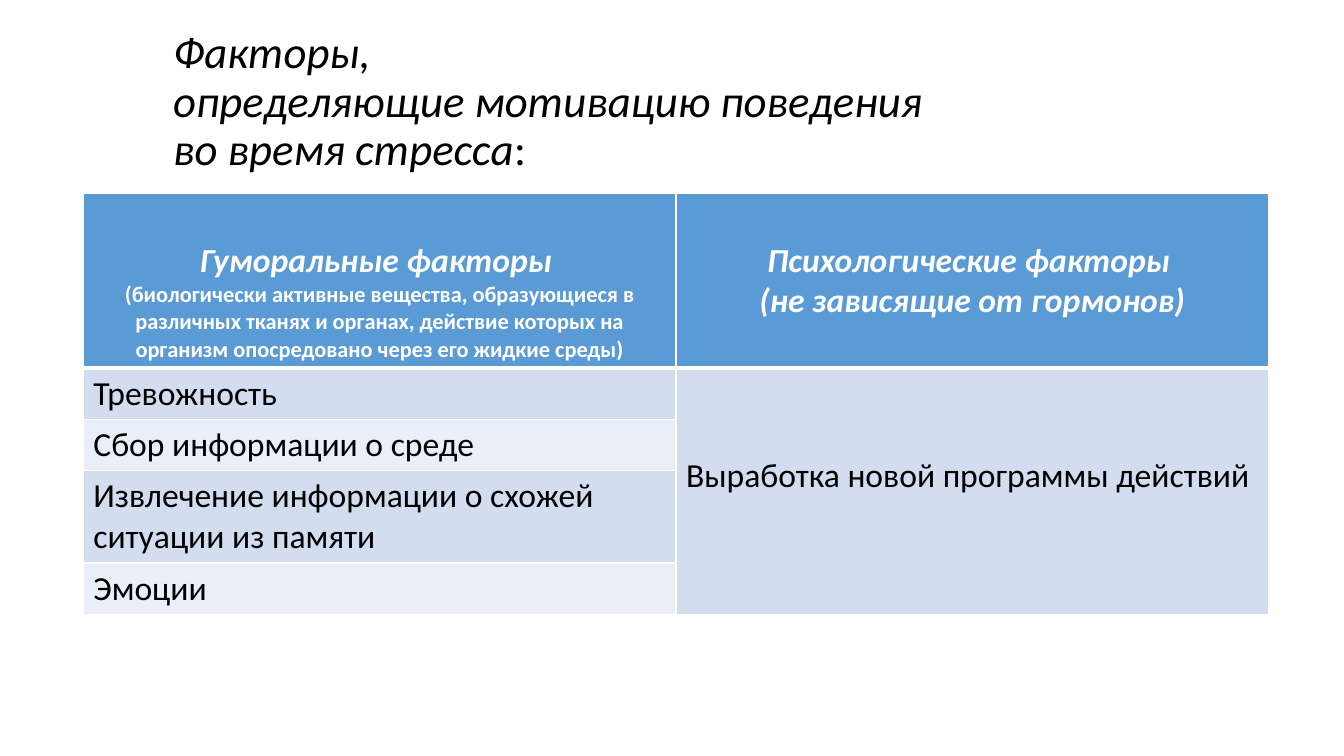
from lxml.etree import SubElement
from pptx import Presentation
from pptx.dml.color import RGBColor as Rgb
from pptx.enum.text import MSO_ANCHOR as Anchor, MSO_AUTO_SIZE as AutoSize, PP_ALIGN as Align
from pptx.oxml.ns import qn
from pptx.util import Cm, Pt

COLORS = {"text": "000000", "white": "FFFFFF", "header": "5B9BD5",
          "odd": "D2DEEF", "even": "EAEFF7"}
FONT = "Calibri"
TITLE_LINES = ["Факторы, ", "определяющие мотивацию поведения ", "во время стресса"]
HUMORAL_HEADER = [
    ("Гуморальные факторы ", 24, True),
    ("(биологически активные вещества, образующиеся в различных тканях и органах, "
     "действие которых на организм опосредовано через его жидкие среды)", 16, False),
]
PSYCHOLOGICAL_HEADER = [
    ("Психологические факторы ", 24, True),
    ("(не зависящие от гормонов)", 24, True),
]
HUMORAL_FACTORS = ["Тревожность", "Сбор информации о среде",
                   "Извлечение информации о схожей ситуации из памяти", "Эмоции"]
PSYCHOLOGICAL_FACTOR = "Выработка новой программы действий"
ROW_HEIGHTS = [4.35, 1.29, 1.29, 2.32, 1.29]


def add_run(paragraph, text, size, color, bold=False, italic=False):
    """Append one formatted run to a paragraph."""
    run = paragraph.add_run()
    run.text = text
    font = run.font
    font.name, font.size, font.bold, font.italic = FONT, Pt(size), bold, italic
    font.color.rgb = Rgb.from_string(COLORS[color])


def add_borders(cell, top=1, bottom=1):
    """Give a cell white borders with the given top and bottom widths in points."""
    properties = cell._tc.get_or_add_tcPr()
    for side, width in (("L", 1), ("R", 1), ("T", top), ("B", bottom)):
        border = SubElement(properties, qn(f"a:ln{side}"), w=str(Pt(width)))
        fill = SubElement(border, qn("a:solidFill"))
        SubElement(fill, qn("a:srgbClr"), val=COLORS["white"])


def fill_cell(cell, lines, fill, color, bold=False, align=Align.LEFT, top_margin=0.13):
    """Fill a cell and write its lines as separate paragraphs."""
    cell.fill.solid()
    cell.fill.fore_color.rgb = Rgb.from_string(COLORS[fill])
    cell.margin_top = Cm(top_margin)
    frame = cell.text_frame
    for index, (text, size, italic) in enumerate(lines):
        paragraph = frame.add_paragraph() if index else frame.paragraphs[0]
        paragraph.alignment = align
        add_run(paragraph, text, size, color, bold, italic)


def build_title(slide, left, top, width, height):
    """Place the three-line title in its placeholder."""
    title = slide.shapes.title
    title.left, title.top, title.width, title.height = map(Cm, (left, top, width, height))
    frame = title.text_frame
    frame.auto_size = AutoSize.NONE
    frame.word_wrap = True
    frame.vertical_anchor = Anchor.MIDDLE
    paragraph = frame.paragraphs[0]
    paragraph.alignment = Align.LEFT
    paragraph.line_spacing = 0.9
    for index, line in enumerate(TITLE_LINES):
        if index:
            paragraph.add_line_break()
        add_run(paragraph, line, 32, "text", italic=True)
    add_run(paragraph, ":", 32, "text")


def build_factors_table(slide, left, top, width):
    """Place the table of humoral and psychological factors."""
    table = slide.shapes.add_table(len(ROW_HEIGHTS), 2, Cm(left), Cm(top), Cm(width),
                                   Cm(sum(ROW_HEIGHTS))).table
    for column in table.columns:
        column.width = Cm(width / 2)
    for index, height in enumerate(ROW_HEIGHTS):
        table.rows[index].height = Cm(height)
        for cell in table.rows[index].cells:
            add_borders(cell, top=3 if index == 1 else 1, bottom=1 if index else 3)

    for column, header in enumerate((HUMORAL_HEADER, PSYCHOLOGICAL_HEADER)):
        fill_cell(table.cell(0, column), header, "header", "white", bold=True,
                  align=Align.CENTER, top_margin=1.17)
    for row, factor in enumerate(HUMORAL_FACTORS, start=1):
        fill_cell(table.cell(row, 0), [(factor, 24, False)],
                  "odd" if row % 2 else "even", "text")
    program = table.cell(1, 1)
    program.merge(table.cell(len(HUMORAL_FACTORS), 1))
    fill_cell(program, [(PSYCHOLOGICAL_FACTOR, 24, False)], "odd", "text", top_margin=2.2)


def main():
    """Build and save the slide."""
    deck = Presentation()
    deck.slide_width, deck.slide_height = Cm(33.87), Cm(19.05)
    slide = deck.slides.add_slide(deck.slide_layouts[5])
    build_title(slide, 4.11, 0.58, 27.84, 4.01)
    build_factors_table(slide, 2.1, 4.88, 29.87)
    deck.save("out.pptx")


if __name__ == "__main__":
    main()
